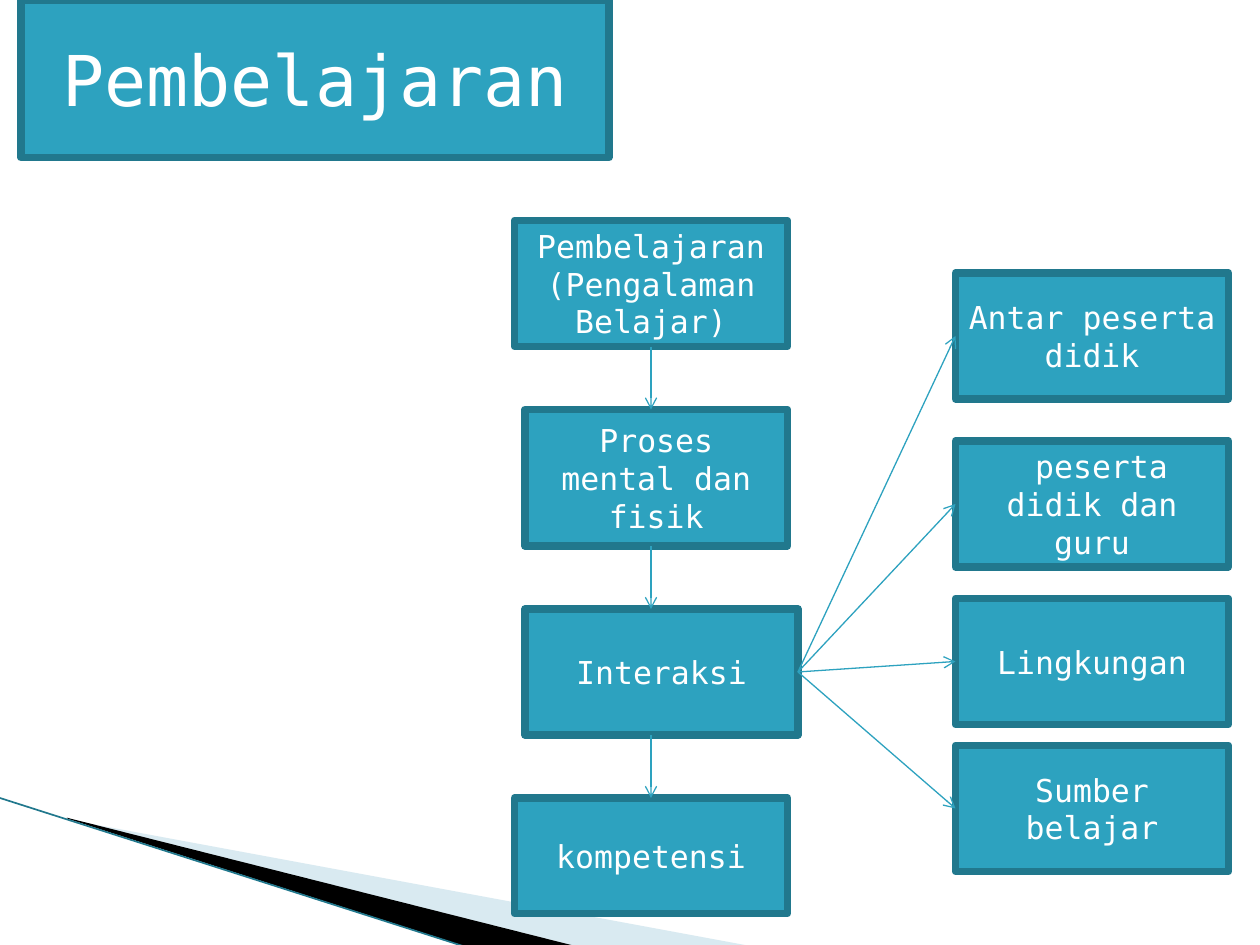
from itertools import pairwise

from lxml.etree import SubElement
from pptx import Presentation
from pptx.dml.color import RGBColor
from pptx.enum.shapes import MSO_CONNECTOR, MSO_SHAPE
from pptx.enum.text import MSO_ANCHOR, PP_ALIGN
from pptx.oxml.ns import qn
from pptx.util import Pt

WHITE = RGBColor(0xFF, 0xFF, 0xFF)
BLACK = RGBColor(0x00, 0x00, 0x00)
TEAL = RGBColor(0x2D, 0xA2, 0xBF)
DARK_TEAL = RGBColor(0x21, 0x78, 0x8D)
PALE_BLUE = RGBColor(0xA0, 0xCB, 0xDC)

TOP, LEFT, BOTTOM, RIGHT = range(4)


class Diagram:
    font_format = {"name": "DejaVu Sans Mono", "size": Pt(18)}
    frame_format = {"word_wrap": True, "vertical_anchor": MSO_ANCHOR.MIDDLE}

    def __init__(self, slide):
        self.shapes = slide.shapes

    def box(self, text, left, top, width, height, **font_changes):
        box = self.shapes.add_shape(
            MSO_SHAPE.RECTANGLE, Pt(left), Pt(top), Pt(width), Pt(height))
        box.shadow.inherit = False
        box.fill.solid()
        box.fill.fore_color.rgb = TEAL
        box.line.color.rgb = DARK_TEAL
        box.line.width = Pt(4.33)
        frame = box.text_frame
        for key, value in self.frame_format.items():
            setattr(frame, key, value)
        frame.text = text
        for paragraph in frame.paragraphs:
            paragraph.alignment = PP_ALIGN.CENTER
            for run in paragraph.runs:
                for key, value in {**self.font_format, **font_changes}.items():
                    setattr(run.font, key, value)
                run.font.color.rgb = WHITE
        return box

    def line(self, start, end, color, width):
        line = self.shapes.add_connector(
            MSO_CONNECTOR.STRAIGHT, *map(Pt, start + end))
        line.line.color.rgb = color
        line.line.width = Pt(width)
        SubElement(line.element.spPr, qn("a:effectLst"))
        return line

    def arrow(self, start, end):
        arrow = self.line(start, end, TEAL, 0.75)
        outline = arrow.element.spPr.find(qn("a:ln"))
        SubElement(outline, qn("a:tailEnd"), type="arrow")
        return arrow

    def wedge(self, points, color, opacity=100):
        first, *rest = [(Pt(x), Pt(y)) for x, y in points]
        builder = self.shapes.build_freeform(*first)
        builder.add_line_segments(rest)
        wedge = builder.convert_to_shape()
        wedge.shadow.inherit = False
        wedge.fill.solid()
        wedge.fill.fore_color.rgb = color
        wedge.line.fill.background()
        if opacity < 100:
            tint = wedge.element.spPr.find(qn("a:solidFill"))[0]
            SubElement(tint, qn("a:alpha"), val=str(opacity * 1000))


def main():
    presentation = Presentation()
    presentation.slide_width, presentation.slide_height = Pt(720), Pt(540)
    diagram = Diagram(presentation.slides.add_slide(presentation.slide_layouts[6]))

    diagram.wedge([(39.6, 468.5), (428.4, 540.5), (328.5, 540.5)], PALE_BLUE, 40)
    diagram.wedge([(38.2, 467.3), (329, 540.7), (267.8, 541.4), (38.9, 468)], BLACK)
    diagram.line((-0.7, 455.8), (267.1, 541.4), DARK_TEAL, 0.95)

    experience = diagram.box("Pembelajaran\n(Pengalaman Belajar)", 294, 126, 156, 72)
    process = diagram.box("Proses mental dan fisik", 300, 234, 150, 78)
    interaction = diagram.box("Interaksi", 300, 348, 156, 72)
    competence = diagram.box("kompetensi", 294, 456, 156, 66)

    axis = 372
    for upper, lower in pairwise([experience, process, interaction, competence]):
        bottom = (upper.top + upper.height).pt if hasattr(upper.top + upper.height, "pt") \
            else upper.top.pt + upper.height.pt
        arrow = diagram.arrow((axis, bottom), (axis, lower.top.pt))
        if upper is experience:
            arrow.begin_connect(upper, BOTTOM)
        if lower is competence:
            arrow.end_connect(lower, TOP)

    partners = [
        ("Antar peserta didik", 156),
        (" peserta didik dan guru", 252),
        ("Lingkungan", 342),
        ("Sumber belajar", 426),
    ]
    for text, top in partners:
        partner = diagram.box(text, 546, top, 156, 72)
        arrow = diagram.arrow((456, 384), (546, top + 36))
        arrow.begin_connect(interaction, RIGHT)
        arrow.end_connect(partner, LEFT)

    diagram.box("Pembelajaran", 12, 0, 336, 90, size=Pt(40))
    presentation.save("out.pptx")


if __name__ == "__main__":
    main()
